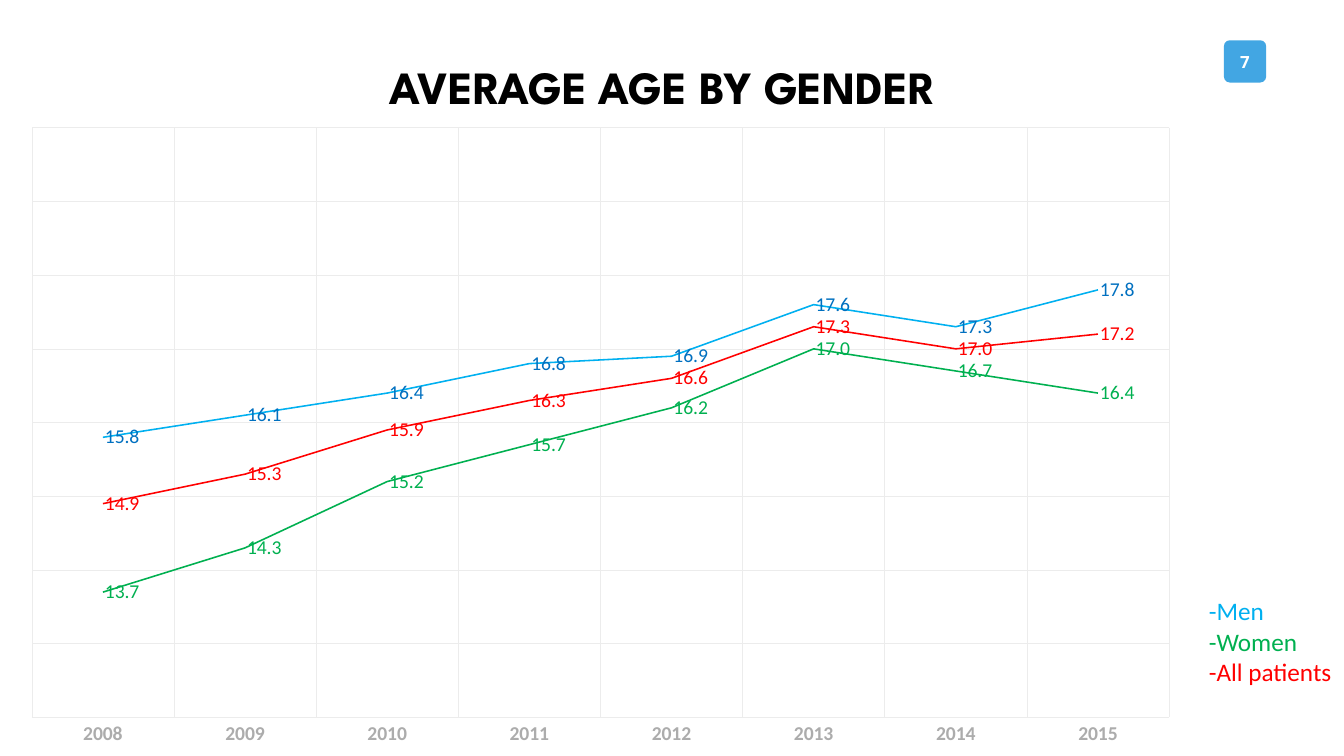
from lxml import etree
from pptx import Presentation
from pptx.chart.data import CategoryChartData
from pptx.dml.color import RGBColor
from pptx.enum.chart import XL_CHART_TYPE, XL_LABEL_POSITION, XL_MARKER_STYLE, XL_TICK_LABEL_POSITION, XL_TICK_MARK
from pptx.enum.shapes import MSO_SHAPE
from pptx.enum.text import MSO_ANCHOR, PP_ALIGN
from pptx.oxml.ns import qn
from pptx.util import Cm, Pt

LINE = XL_CHART_TYPE.LINE
LABEL_RIGHT = XL_LABEL_POSITION.RIGHT
NO_MARKER = XL_MARKER_STYLE.NONE
NO_TICK = XL_TICK_MARK.NONE
LABELS_LOW = XL_TICK_LABEL_POSITION.LOW
ROUNDED = MSO_SHAPE.ROUNDED_RECTANGLE
TOP, MIDDLE = MSO_ANCHOR.TOP, MSO_ANCHOR.MIDDLE
CENTER, LEFT = PP_ALIGN.CENTER, PP_ALIGN.LEFT

# Content
TITLE = "AVERAGE AGE BY GENDER"
PAGE = "7"
YEARS = [str(year) for year in range(2008, 2016)]
SERIES = [  # name, ages, line colour, label colour
    ("Men", [15.8, 16.1, 16.4, 16.8, 16.9, 17.6, 17.3, 17.8], "men", "men_label"),
    ("Women", [13.7, 14.3, 15.2, 15.7, 16.2, 17.0, 16.7, 16.4], "women", "women"),
    ("All patients", [14.9, 15.3, 15.9, 16.3, 16.6, 17.3, 17.0, 17.2], "all", "all"),
]
AGE_RANGE = (12, 20)

# Theme
THEME = {
    "color": {"men": "00B0F0", "men_label": "0070C0", "women": "00B050", "all": "FF0000",
              "title": "000000", "badge": "42A6E3", "page": "FFFFFF",
              "axis": "ACACAC", "grid": "ECECEC", "chart": "7F7F7F"},
    "size": {"title": 66, "legend": 36, "chart": 28, "page": 24},
    "font": {"title": "League Spartan", "body": "Calibri", "page": "Open Sans"},
}

# Layout in cm: left, top, width, height
TITLE_BOX = (17.3, 2.06, 32.2, 3.81)
BADGE_BOX = (61.67, 2.03, 2.13, 2.13)
LEGEND_BOX = (60.66, 29.9, 8.38, 4.88)
CHART_BOX = (0.41, 5.79, 59.69, 32.31)
PLOT = {"x": 0.02, "y": 0.02, "w": 0.96, "h": 0.92}  # shares of the chart


def color(name):
    return RGBColor.from_string(THEME["color"][name])


def place(sp, box):
    sp.left, sp.top, sp.width, sp.height = (Cm(v) for v in box)


def style(font, family, size, color_name, bold=False):
    font.name = THEME["font"][family]
    font.size = Pt(THEME["size"][size])
    font.color.rgb = color(color_name)
    font.bold = bold


def draw_line(fmt, color_name, width):
    fmt.line.color.rgb = color(color_name)
    fmt.line.width = Pt(width)


def add_title(s):
    sp = s.shapes.title
    place(sp, TITLE_BOX)
    tf = sp.text_frame
    tf.text = TITLE
    tf.word_wrap = False
    tf.vertical_anchor = TOP
    p = tf.paragraphs[0]
    p.alignment = CENTER
    p.line_spacing = Pt(100)
    style(p.runs[0].font, "title", "title", "title", True)


def add_badge(s):
    sp = s.shapes.add_shape(ROUNDED, *(Cm(v) for v in BADGE_BOX))
    sp.adjustments[0] = 0.14
    sp.shadow.inherit = False
    sp.fill.solid()
    sp.fill.fore_color.rgb = color("badge")
    sp.line.fill.background()
    tf = sp.text_frame
    tf.text = PAGE
    tf.word_wrap = False
    tf.vertical_anchor = MIDDLE
    p = tf.paragraphs[0]
    p.alignment = CENTER
    style(p.runs[0].font, "page", "page", "page", True)


def add_legend(s):
    tf = s.shapes.add_textbox(*(Cm(v) for v in LEGEND_BOX)).text_frame
    tf.word_wrap = True
    tf.text = "\n".join(f"-{name}" for name, *_ in SERIES)
    for p, (_, _, line_color, _) in zip(tf.paragraphs, SERIES):
        p.alignment = LEFT
        style(p.runs[0].font, "body", "legend", line_color)


def set_plot_area(chart):
    area = chart.plots[0]._element.getparent()
    for old in area.findall(qn("c:layout")):
        area.remove(old)
    layout = etree.Element(qn("c:layout"))
    manual = etree.SubElement(layout, qn("c:manualLayout"))
    settings = {"layoutTarget": "inner", "xMode": "edge", "yMode": "edge", **PLOT}
    for tag, value in settings.items():
        etree.SubElement(manual, qn(f"c:{tag}")).set("val", str(value))
    area.insert(0, layout)


def add_chart(s):
    data = CategoryChartData(number_format="#,##0.0")
    data.categories = YEARS
    for name, ages, *_ in SERIES:
        data.add_series(name, ages)
    chart = s.shapes.add_chart(LINE, *(Cm(v) for v in CHART_BOX), data).chart
    chart.has_legend = False
    chart.has_title = False
    style(chart.font, "body", "chart", "chart")
    chart.plots[0].vary_by_categories = False
    set_plot_area(chart)

    # Axes and grid
    years, ages_axis = chart.category_axis, chart.value_axis
    for axis in (years, ages_axis):
        axis.has_major_gridlines = True
        draw_line(axis.major_gridlines.format, "grid", 0.75)
    years.major_tick_mark = years.minor_tick_mark = NO_TICK
    years.tick_label_position = LABELS_LOW
    draw_line(years.format, "grid", 0.75)
    style(years.tick_labels.font, "body", "chart", "axis", True)
    ages_axis.minimum_scale, ages_axis.maximum_scale = AGE_RANGE
    ages_axis.major_unit = 1
    ages_axis.visible = False

    # Lines and value labels
    for line, (_, _, line_color, label_color) in zip(chart.plots[0].series, SERIES):
        line.smooth = False
        line.marker.style = NO_MARKER
        draw_line(line.format, line_color, 2.25)
        labels = line.data_labels
        labels.show_value = True
        labels.number_format = "#,##0.0"
        labels.number_format_is_linked = False
        labels.position = LABEL_RIGHT
        style(labels.font, "body", "chart", label_color)


def main():
    prs = Presentation()
    prs.slide_width, prs.slide_height = Cm(67.72), Cm(38.1)
    s = prs.slides.add_slide(prs.slide_layouts[5])
    add_badge(s)
    add_title(s)
    add_legend(s)
    add_chart(s)
    prs.save("out.pptx")


if __name__ == "__main__":
    main()
